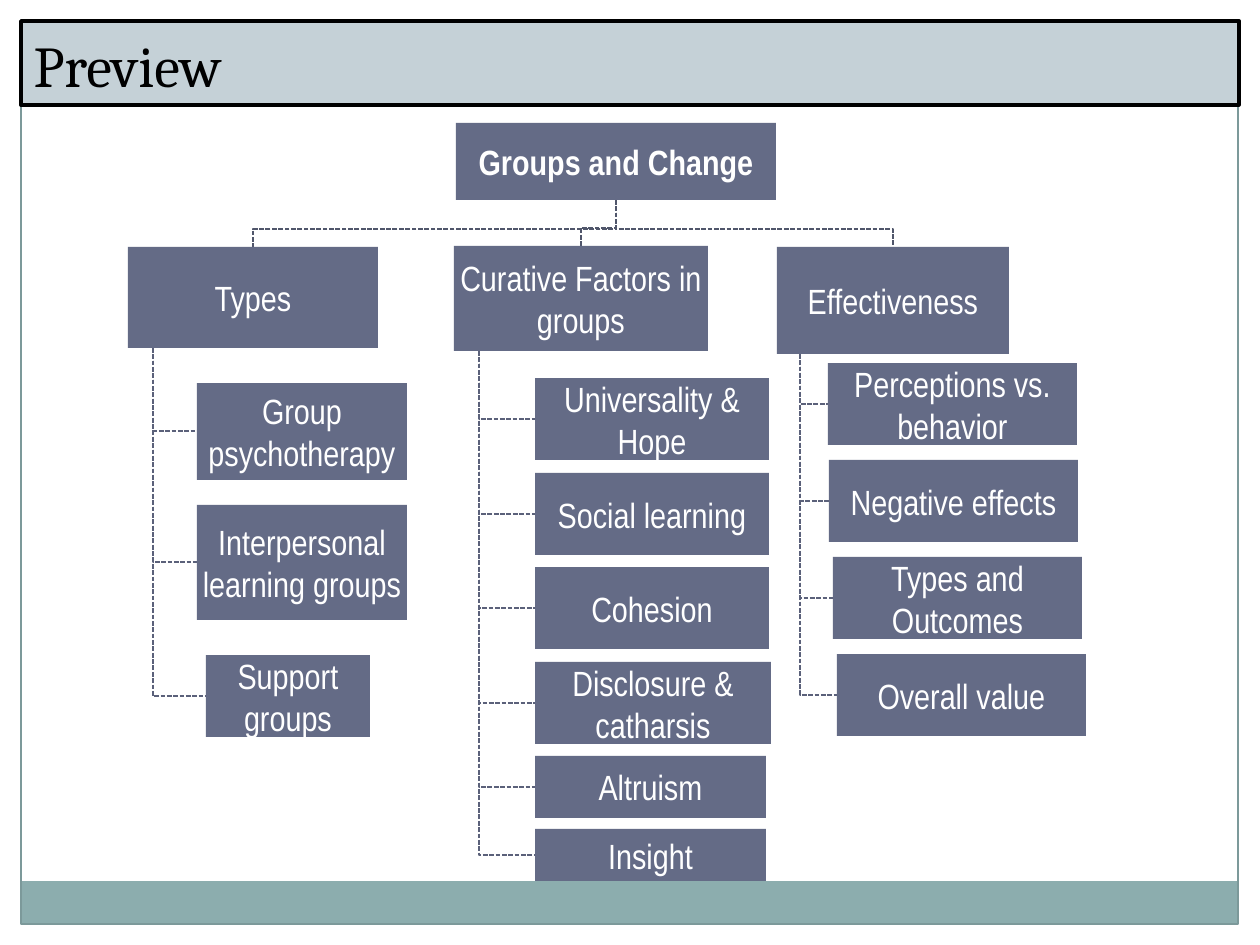
import dataclasses

import pptx
import pptx.dml.color
import pptx.enum.dml
import pptx.enum.shapes
import pptx.enum.text
import pptx.util

PX = 914400 / 126
WIDTH, HEIGHT = 1260, 945
RECT = pptx.enum.shapes.MSO_SHAPE.RECTANGLE
ALIGN = pptx.enum.text.PP_ALIGN
ANCHOR = pptx.enum.text.MSO_ANCHOR

ROOT = ("Groups and Change", (456, 123, 320, 77))
BRANCHES = [
    ("Types", (128, 247, 250, 101), [
        ("Group psychotherapy", (69, 136, 210, 97)),
        ("Interpersonal learning groups", (69, 258, 210, 115)),
        ("Support groups", (78, 408, 164, 82)),
    ]),
    ("Curative Factors in groups", (454, 246, 254, 105), [
        ("Universality & Hope", (81, 132, 234, 82)),
        ("Social learning", (81, 227, 234, 82)),
        ("Cohesion", (81, 321, 234, 82)),
        ("Disclosure & catharsis", (81, 416, 236, 82)),
        ("Altruism", (81, 510, 231, 62)),
        ("Insight", (81, 583, 231, 52)),
    ]),
    ("Effectiveness", (777, 247, 232, 107), [
        ("Perceptions vs. behavior", (51, 116, 249, 82)),
        ("Negative effects", (52, 213, 249, 82)),
        ("Types and Outcomes", (56, 310, 249, 82)),
        ("Overall value", (60, 407, 249, 82)),
    ]),
]


@dataclasses.dataclass(frozen=True)
class Theme:
    """Colours, fonts and type sizes of the slide."""
    node: str = "646B86"
    node_text: str = "FFFFFF"
    root_link: str = "50566B"
    leaf_link: str = "5B617A"
    title_fill: str = "C5D1D7"
    title_ink: str = "000000"
    band: str = "8CADAE"
    frame: str = "7C999A"
    title_font: str = "Cambria"
    node_font: str = "Arial Narrow"
    title_size: int = 33
    node_size: int = 20


THEME = Theme()


def emu(*lengths):
    """Turn px lengths into EMU."""
    return [pptx.util.Emu(round(n * PX)) for n in lengths]


def rgb(code):
    """Return the colour for a hex code."""
    return pptx.dml.color.RGBColor.from_string(code)


def paint(sp, fill=None, line=None, width=0.75):
    """Set the fill and outline of a shape and drop its shadow."""
    if fill:
        sp.fill.solid()
        sp.fill.fore_color.rgb = rgb(fill)
    else:
        sp.fill.background()
    if line:
        sp.line.color.rgb = rgb(line)
        sp.line.width = pptx.util.Pt(width)
    else:
        sp.line.fill.background()
    sp.shadow.inherit = False


def style(p, name, size, color, align, bold=False):
    """Format one paragraph."""
    p.alignment = align
    p.font.name = name
    p.font.size = pptx.util.Pt(size)
    p.font.color.rgb = rgb(color)
    p.font.bold = bold


def add_node(s, text, box, bold=False):
    """Add one labelled box of the chart."""
    sp = s.shapes.add_shape(RECT, *emu(*box))
    paint(sp, THEME.node)
    tf = sp.text_frame
    tf.word_wrap = True
    tf.vertical_anchor = ANCHOR.MIDDLE
    tf.margin_left, tf.margin_top, tf.margin_right, tf.margin_bottom = emu(1, 1, 1, 1)
    tf.text = text
    style(tf.paragraphs[0], THEME.node_font, THEME.node_size,
          THEME.node_text, ALIGN.CENTER, bold)


def add_link(s, points, color):
    """Add a dashed elbow line through the points."""
    start, *rest = points
    builder = s.shapes.build_freeform(*start, scale=PX)
    builder.add_line_segments(rest, close=False)
    sp = builder.convert_to_shape()
    paint(sp, line=color, width=0.9)
    sp.line.dash_style = pptx.enum.dml.MSO_LINE.SQUARE_DOT
    sp.line.dash_style = pptx.enum.dml.MSO_LINE.SQUARE_DOT


def add_branch(s, text, box, leaves):
    """Add a branch head with its leaves hung from a trunk line."""
    x, y, w, h = box
    trunk = x + round(w / 10)
    for label, (dx, dy, lw, lh) in leaves:
        left, top = x + dx, y + dy
        middle = top + lh // 2
        add_link(s, [(trunk, y + h), (trunk, middle), (left, middle)], THEME.leaf_link)
        add_node(s, label, (left, top, lw, lh))
    add_node(s, text, box)


def add_chart_tree(s, root, branches):
    """Add the root, its links and every branch."""
    text, (x, y, w, h) = root
    stem = x + w // 2
    for name, (left, top, width, height), leaves in branches:
        head, bus = left + width // 2, top - 18
        add_link(s, [(stem, y + h), (stem, bus), (head, bus), (head, top)],
                 THEME.root_link)
        add_branch(s, name, (left, top, width, height), leaves)
    add_node(s, text, (x, y, w, h), bold=True)


def add_backdrop(s, box, band_height):
    """Add the bottom band and the thin frame."""
    x, y, w, h = box
    band = s.shapes.add_shape(RECT, *emu(x, y + h - band_height, w, band_height))
    paint(band, THEME.band)
    paint(s.shapes.add_shape(RECT, *emu(*box)), line=THEME.frame)


def add_title(s, text, box):
    """Place the title placeholder in front as a bordered bar."""
    sp = s.shapes.title
    sp.left, sp.top, sp.width, sp.height = emu(*box)
    paint(sp, THEME.title_fill, THEME.title_ink, 2)
    tf = sp.text_frame
    tf.auto_size = pptx.enum.text.MSO_AUTO_SIZE.NONE
    tf.vertical_anchor = ANCHOR.BOTTOM
    tf.text = text
    style(tf.paragraphs[0], THEME.title_font, THEME.title_size,
          THEME.title_ink, ALIGN.LEFT)
    sp.element.getparent().append(sp.element)


def main():
    """Build and save the slide."""
    prs = pptx.Presentation()
    prs.slide_width, prs.slide_height = emu(WIDTH, HEIGHT)
    s = prs.slides.add_slide(prs.slide_layouts[5])
    add_backdrop(s, (21, 21, 1217, 903), 43)
    add_chart_tree(s, ROOT, BRANCHES)
    add_title(s, "Preview", (21, 21, 1218, 84))
    prs.save("out.pptx")


if __name__ == "__main__":
    main()
